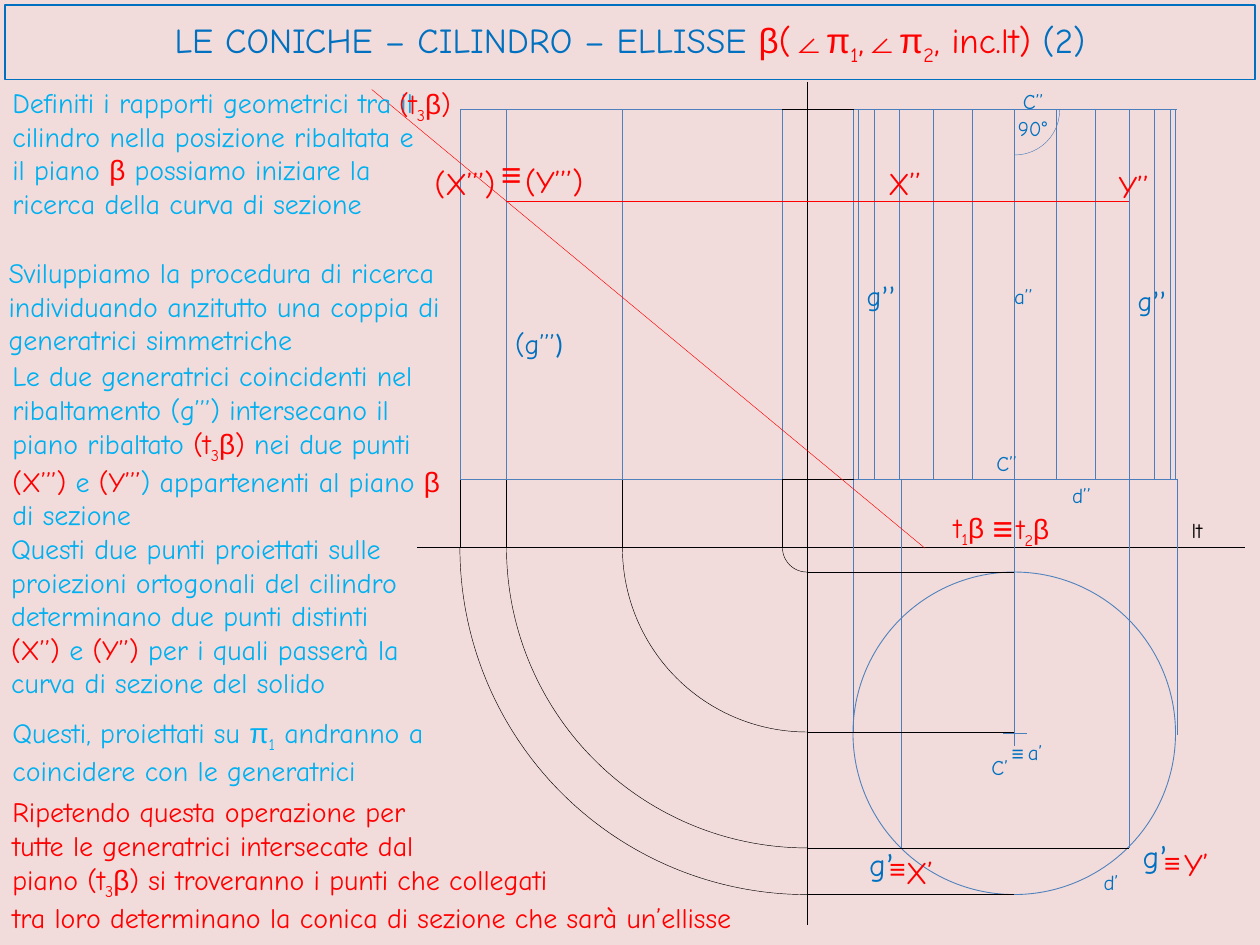
from dataclasses import dataclass
from itertools import groupby
from math import cos, radians
from typing import NamedTuple

from lxml.etree import SubElement
from pptx import Presentation
from pptx.dml.color import RGBColor
from pptx.enum.shapes import MSO_CONNECTOR, MSO_SHAPE
from pptx.enum.text import MSO_ANCHOR, MSO_AUTO_SIZE, PP_ALIGN
from pptx.oxml.ns import qn
from pptx.util import Emu, Pt

EMU_PER_PX = 9144  # 100 px to the inch


@dataclass(frozen=True)
class Theme:
    background: str = "F2DCDB"
    title: str = "0070C0"
    body: str = "00B0F0"
    accent: str = "FF0000"
    black: str = "000000"
    cylinder: str = "4B7EBC"
    side_view: str = "4F81BD"
    font: str = "Comic Neue"
    symbol_font: str = "Arial"
    prime_font: str = "Calibri"
    thin: float = 0.25
    circle_line: float = 0.5
    title_line: float = 0.75
    small: int = 12
    text: int = 16
    label: int = 18
    heading: int = 20


THEME = Theme()
SYMBOLS = "βπ∠≡"
SUBSCRIPTS = {"₁": "1", "₂": "2", "₃": "3"}


class Line(NamedTuple):
    x1: int
    y1: int
    x2: int
    y2: int
    color: str


class Arc(NamedTuple):
    left: int
    top: int
    diameter: int
    start: int
    end: int
    color: str


class Span(NamedTuple):
    text: str
    color: str
    font: str = THEME.font


class TextBlock(NamedTuple):
    left: int
    top: int
    width: int
    height: int
    size: int
    paragraphs: list[list[Span]]
    bold: bool = False


def px(value: float) -> Emu:
    return Emu(round(value * EMU_PER_PX))


def rgb(color: str) -> RGBColor:
    return RGBColor.from_string(color)


def apply_format(target, values: dict) -> None:
    for name, value in values.items():
        setattr(target, name, value)


def draw_line(slide, line: Line) -> None:
    connector = slide.shapes.add_connector(
        MSO_CONNECTOR.STRAIGHT, px(line.x1), px(line.y1), px(line.x2), px(line.y2))
    connector.line.color.rgb = rgb(line.color)
    connector.line.width = Pt(THEME.thin)
    SubElement(connector._element.spPr, qn("a:effectLst"))


def draw_outline(slide, kind, left: int, top: int, diameter: int, color: str, width: float):
    shape = slide.shapes.add_shape(kind, px(left), px(top), px(diameter), px(diameter))
    shape.shadow.inherit = False
    shape.fill.background()
    shape.line.color.rgb = rgb(color)
    shape.line.width = Pt(width)
    return shape


def draw_arc(slide, arc: Arc) -> None:
    shape = draw_outline(slide, MSO_SHAPE.ARC, arc.left, arc.top, arc.diameter,
                         arc.color, THEME.thin)
    for index, angle in enumerate((arc.start, arc.end)):
        shape.adjustments[index] = angle * 0.6  # 60000ths of a degree over 100000


def character_kind(character: str) -> str:
    if character in SUBSCRIPTS:
        return "subscript"
    return "symbol" if character in SYMBOLS else "plain"


def add_span(paragraph, span: Span, size: int, bold: bool) -> None:
    """Split the span into plain, symbol and subscript runs."""
    for kind, characters in groupby(span.text, character_kind):
        run = paragraph.add_run()
        run.text = "".join(SUBSCRIPTS.get(character, character) for character in characters)
        font_name = THEME.symbol_font if kind == "symbol" else span.font
        apply_format(run.font, {"name": font_name, "size": Pt(size), "bold": bold})
        run.font.color.rgb = rgb(span.color)
        if kind == "subscript":
            run.font._element.set("baseline", "-25000")


def draw_text(slide, block: TextBlock):
    box = slide.shapes.add_textbox(
        px(block.left), px(block.top), px(block.width), px(block.height))
    frame = box.text_frame
    apply_format(frame, {"word_wrap": True, "auto_size": MSO_AUTO_SIZE.SHAPE_TO_FIT_TEXT})
    for index, spans in enumerate(block.paragraphs):
        paragraph = frame.paragraphs[0] if index == 0 else frame.add_paragraph()
        for span in spans:
            add_span(paragraph, span, block.size, block.bold)
    return box


def blue(text: str) -> Span:
    return Span(text, THEME.title)


def sky(text: str) -> Span:
    return Span(text, THEME.body)


def red(text: str) -> Span:
    return Span(text, THEME.accent)


def prime(text: str) -> Span:
    return Span(text, THEME.title, THEME.prime_font)


def label(left: int, top: int, width: int, size: int, *spans: Span, bold=False) -> TextBlock:
    return TextBlock(left, top, width, 37, size, [list(spans)], bold)


TOP, BASE, GROUND = 87, 380, 434
AXIS, RADIUS, CENTER_Y = 805, 128, 582
FOLD = 641
# Side-view generatrix and the x where its plan projection ends
FOLDED = {365: AXIS, 402: 896, 494: AXIS, 621: AXIS}
GENERATRICES = [round(AXIS - RADIUS * cos(radians(angle))) for angle in range(0, 181, 15)]

LINES = [
    Line(640, GROUND, 979, GROUND, THEME.accent),
    Line(331, GROUND, 988, GROUND, THEME.black),
    Line(FOLD, 65, FOLD, 734, THEME.black),
    *(Line(x, TOP, x, BASE, THEME.cylinder) for x in GENERATRICES),
    *(Line(x, BASE, x, bottom, THEME.cylinder)
      for x, bottom in ((677, 581), (715, 673), (AXIS, 592), (896, 673), (934, 583))),
    Line(796, CENTER_Y, 815, CENTER_Y, THEME.cylinder),
    *(Line(x, TOP, x, BASE, THEME.side_view) for x in FOLDED),
    *(Line(x, BASE, x, GROUND, THEME.black) for x in FOLDED),
    *(Line(FOLD, 1075 - x, end, 1075 - x, THEME.black) for x, end in FOLDED.items()),
    *(Line(x1, y, x2, y, color) for y in (TOP, BASE) for x1, x2, color in (
        (365, 621, THEME.side_view), (621, 678, THEME.black), (678, 934, THEME.cylinder))),
    Line(295, 71, 734, 435, THEME.accent),
    Line(402, 160, 896, 160, THEME.accent),
]

ARCS = [
    Arc(770, 52, 71, 0, 90, THEME.cylinder),
    *(Arc(x, x - 206, 1281 - 2 * x, 90, 180, THEME.black) for x in FOLDED),
]

TEXTS = [
    TextBlock(0, 63, 343, 145, THEME.text, [[
        sky("Definiti i rapporti geometrici tra il cilindro nella posizione ribaltata e il piano "),
        red("β "), sky("possiamo iniziare la ricerca della curva di sezione")]]),
    TextBlock(-3, 198, 382, 91, THEME.text, [[
        sky("Sviluppiamo la procedura di ricerca individuando anzitutto una coppia di "
            "generatrici simmetriche")]]),
    TextBlock(0, 280, 366, 145, THEME.text, [[
        sky("Le due generatrici coincidenti nel ribaltamento (g’’’) intersecano il piano ribaltato "),
        red("(t₃β) "), sky("nei due punti "), red("(X’’’)"), sky(" e "), red("(Y’’’"),
        sky(") appartenenti al piano "), red("β"), sky(" di sezione")]]),
    TextBlock(-1, 417, 357, 145, THEME.text, [
        [sky("Questi due punti proiettati sulle proiezioni ortogonali del cilindro "
             "determinano due punti distinti")],
        [red("(X’’) "), sky("e "), red("(Y’’) "),
         sky("per i quali passerà la curva di sezione del solido")]]),
    TextBlock(0, 563, 389, 64, THEME.text, [[
        sky("Questi, proiettati su π₁ andranno a coincidere con le generatrici")]]),
    TextBlock(0, 626, 704, 118, THEME.text, [[red(text)] for text in (
        "Ripetendo questa operazione per",
        "tutte le generatrici intersecate dal",
        "piano (t₃β) si troveranno i punti che collegati",
        "tra loro determinano la conica di sezione che sarà un’ellisse")]),
    *(label(left, top, 52, THEME.small, blue(text)) for left, top, text in (
        (781, 353, "C’’"), (777, 594, "C’"), (841, 378, "d’’"), (866, 685, "d’"),
        (795, 220, "a’’"), (806, 582, "a’"), (793, 583, "≡"), (802, 65, "C’’"),
        (798, 87, "90°"))),
    label(936, 406, 38, THEME.small, Span("lt", THEME.black)),
    *(label(left, top, 47, size, blue("g"), prime(marks)) for left, top, size, marks in (
        (893, 220, THEME.text, "’’"), (678, 216, THEME.text, "’’"),
        (897, 659, THEME.label, "’"), (680, 666, THEME.label, "’"))),
    label(399, 254, 63, THEME.text, blue("(g’’’"), prime(")")),
    *(label(left, top, 71, THEME.label, red(text)) for left, top, text in (
        (335, 125, "(X’’’)"), (407, 124, "(Y’’’)"), (878, 128, "Y’’"),
        (695, 125, "X’’"), (930, 666, "Y’"), (709, 672, "X’"))),
    *(label(left, top, 71, THEME.text, red(text)) for left, top, text in (
        (797, 401, "t₂β"), (747, 400, "t₁β"), (307, 64, "(t₃β)"),
        (696, 671, "≡"), (914, 666, "≡"))),
    *(label(left, top, 40, THEME.heading, red("≡"), bold=True)
      for left, top in ((778, 397), (388, 116))),
]

TITLE = TextBlock(4, 4, 992, 59, THEME.heading, [[
    blue("LE CONICHE – CILINDRO – ELLISSE "), red("β(∠π₁,∠π₂, inc.lt)"), blue(" (2)")]])


def draw_title(slide) -> None:
    box = draw_text(slide, TITLE)
    apply_format(box.text_frame, {"auto_size": MSO_AUTO_SIZE.NONE,
                                  "vertical_anchor": MSO_ANCHOR.MIDDLE})
    box.text_frame.paragraphs[0].alignment = PP_ALIGN.CENTER
    box.line.color.rgb = rgb(THEME.title)
    box.line.width = Pt(THEME.title_line)


def main() -> None:
    presentation = Presentation()
    apply_format(presentation, {"slide_width": px(1000), "slide_height": px(750)})
    slide = presentation.slides.add_slide(presentation.slide_layouts[6])
    slide.background.fill.solid()
    slide.background.fill.fore_color.rgb = rgb(THEME.background)
    draw_title(slide)
    draw_outline(slide, MSO_SHAPE.OVAL, 677, 454, 2 * RADIUS, THEME.side_view, THEME.circle_line)
    for line in LINES:
        draw_line(slide, line)
    for arc in ARCS:
        draw_arc(slide, arc)
    for block in TEXTS:
        draw_text(slide, block)
    presentation.save("out.pptx")


if __name__ == "__main__":
    main()
